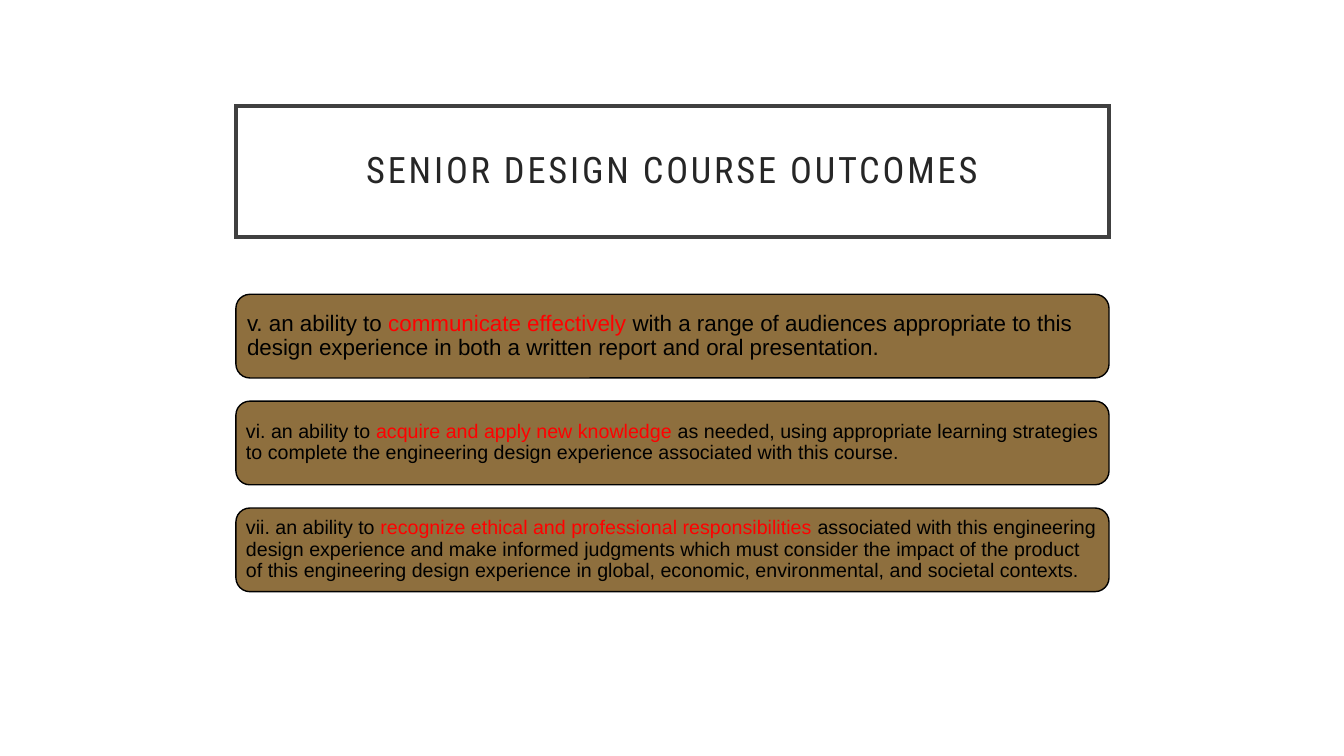
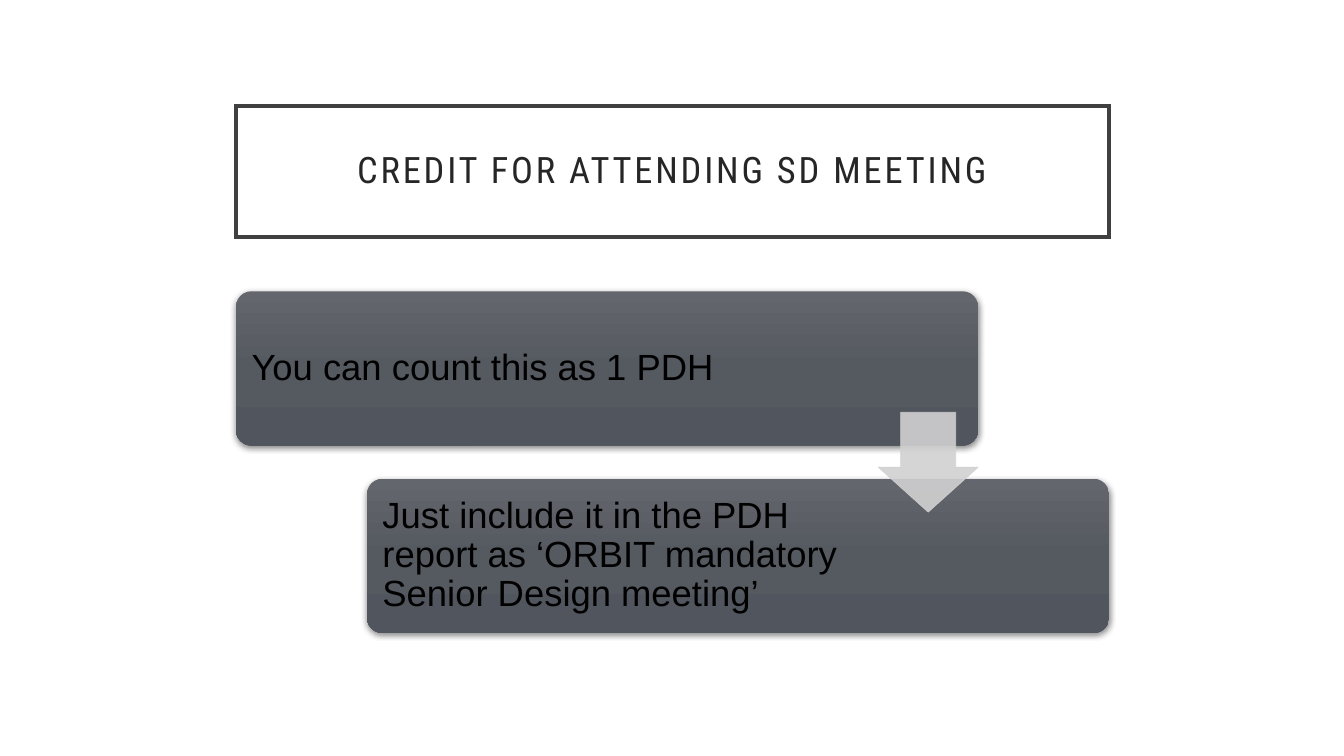
from copy import deepcopy
from lxml import etree
from pptx import Presentation
from pptx import util as u
from pptx.dml.color import RGBColor
from pptx.enum import shapes, text
from pptx.oxml.ns import qn

WHITE = RGBColor(0xFF, 0xFF, 0xFF)
BLACK = RGBColor(0, 0, 0)
RED = RGBColor(0xFF, 0, 0)
INK = RGBColor(0x26, 0x26, 0x26)
FRAME = RGBColor(0x40, 0x40, 0x40)
BRONZE = RGBColor(0x8E, 0x6F, 0x3E)
SILVER = RGBColor(0xD1, 0xD1, 0xD2)
SLATE = [(0, RGBColor(0x63, 0x66, 0x6C)), (0.5, RGBColor(0x55, 0x59, 0x60)),
         (1, RGBColor(0x51, 0x55, 0x5D))]

OUTCOMES_TITLE = "SENIOR DESIGN COURSE OUTCOMES"
OUTCOMES = [
    (16, 0.07, "v. an ability to ", "communicate effectively ",
     "with a range of audiences appropriate to this design experience in both "
     "a written report and oral presentation."),
    (14, 0.06, "vi. an ability to ", "acquire and apply new knowledge ",
     "as needed, using appropriate learning strategies to complete the "
     "engineering design experience associated with this course."),
    (14, 0.06, "vii. an ability to ", "recognize ethical and professional responsibilities ",
     "associated with this engineering design experience and make informed "
     "judgments which must consider the impact of the product of this "
     "engineering design experience in global, economic, environmental, and "
     "societal contexts."),
]
CREDIT_TITLE = "CREDIT FOR ATTENDING SD MEETING"
STEPS = [
    ("You can count this as 1 PDH", 1.59),
    ("Just include it in the PDH report as ‘ORBIT mandatory Senior Design meeting’", 2.39),
]

LEFT, WIDTH = 2.34, 8.66
CARD_TOP, CARD_H, CARD_PITCH = 2.92, 0.83, 1.06
STEP_TOP, STEP_W, STEP_H, STEP_PITCH = 2.89, 0.85 * WIDTH, 1.53, 1.86
ARROW = 0.99


def set_all(obj, **values):
    for name, value in values.items():
        setattr(obj, name, value)


def add_xml(parent, tag, **attrs):
    return etree.SubElement(parent, qn(tag), {k: str(v) for k, v in attrs.items()})


def write(sp, runs, size, font, insets, align=text.PP_ALIGN.LEFT):
    tf = sp.text_frame
    margins = zip(("margin_left", "margin_top", "margin_right", "margin_bottom"), insets)
    set_all(tf, word_wrap=True, auto_size=text.MSO_AUTO_SIZE.NONE,
            vertical_anchor=text.MSO_ANCHOR.MIDDLE,
            **{side: u.Inches(v) for side, v in margins})
    p = tf.paragraphs[0]
    set_all(p, alignment=align, line_spacing=0.9)
    for words, color in runs:
        r = p.add_run()
        r.text = words
        set_all(r.font, size=u.Pt(size), name=font)
        r.font.color.rgb = color
    return p


def paint(sp, fill, line, weight):
    sp.fill.solid()
    sp.fill.fore_color.rgb = fill
    sp.line.color.rgb = line
    sp.line.width = u.Pt(weight)


def add_box(s, kind, *at):
    sp = s.shapes.add_shape(kind, *map(u.Inches, at))
    sp.shadow.inherit = False
    return sp


def add_slide(prs, title):
    s = prs.slides.add_slide(prs.slide_layouts[5])
    sp = s.shapes.title
    set_all(sp, left=u.Inches(LEFT), top=u.Inches(1.05),
            width=u.Inches(WIDTH), height=u.Inches(1.3))
    paint(sp, WHITE, FRAME, 2.5)
    add_xml(sp._element.spPr.find(qn("a:ln")), "a:miter", lim=800000)
    p = write(sp, [(title, INK)], 26, "Roboto Condensed", [0.2] * 4, text.PP_ALIGN.CENTER)
    p.runs[0].font._element.set("spc", "200")
    return s


def add_outcomes(s):
    for i, (size, inset, lead, skill, rest) in enumerate(OUTCOMES):
        sp = add_box(s, shapes.MSO_SHAPE.ROUNDED_RECTANGLE,
                     LEFT, CARD_TOP + i * CARD_PITCH, WIDTH, CARD_H)
        paint(sp, BRONZE, BLACK, 1)
        write(sp, [(lead, BLACK), (skill, RED), (rest, BLACK)], size, "Arial", [inset] * 4)


def shade(sp):
    sp.fill.gradient()
    sp.fill.gradient_angle = 270
    spPr = sp._element.spPr
    stops = spPr.find(".//" + qn("a:gsLst"))
    stops.insert(1, deepcopy(stops[0]))
    for stop, (position, color) in zip(sp.fill.gradient_stops, SLATE):
        stop.position = position
        stop.color.rgb = color
    sp.line.fill.background()
    shadow = add_xml(spPr.find(qn("a:effectLst")), "a:outerShdw", blurRad=u.Pt(4.4),
                     dist=u.Pt(1.2), dir=5400000, algn="ctr", rotWithShape=0)
    add_xml(add_xml(shadow, "a:srgbClr", val=BLACK), "a:alpha", val=45000)


def add_steps(s):
    for i, (words, right) in enumerate(STEPS):
        sp = add_box(s, shapes.MSO_SHAPE.ROUNDED_RECTANGLE,
                     LEFT + i * (WIDTH - STEP_W), STEP_TOP + i * STEP_PITCH, STEP_W, STEP_H)
        sp.adjustments[0] = 0.1
        shade(sp)
        write(sp, [(words, BLACK)], 26, "Arial", [0.11, 0.11, right, 0.11])
    middle = STEP_TOP + (STEP_H + STEP_PITCH) / 2
    arrow = add_box(s, shapes.MSO_SHAPE.DOWN_ARROW,
                    LEFT + STEP_W - ARROW, middle - ARROW / 2, ARROW, ARROW)
    arrow.adjustments[0], arrow.adjustments[1] = 0.55, 0.45
    paint(arrow, SILVER, SILVER, 0.5)
    for color in arrow._element.spPr.iter(qn("a:srgbClr")):
        add_xml(color, "a:alpha", val=90000)


def main():
    prs = Presentation()
    set_all(prs, slide_width=u.Inches(13.33), slide_height=u.Inches(7.5))
    add_outcomes(add_slide(prs, OUTCOMES_TITLE))
    add_steps(add_slide(prs, CREDIT_TITLE))
    prs.save("out.pptx")


if __name__ == "__main__":
    main()
